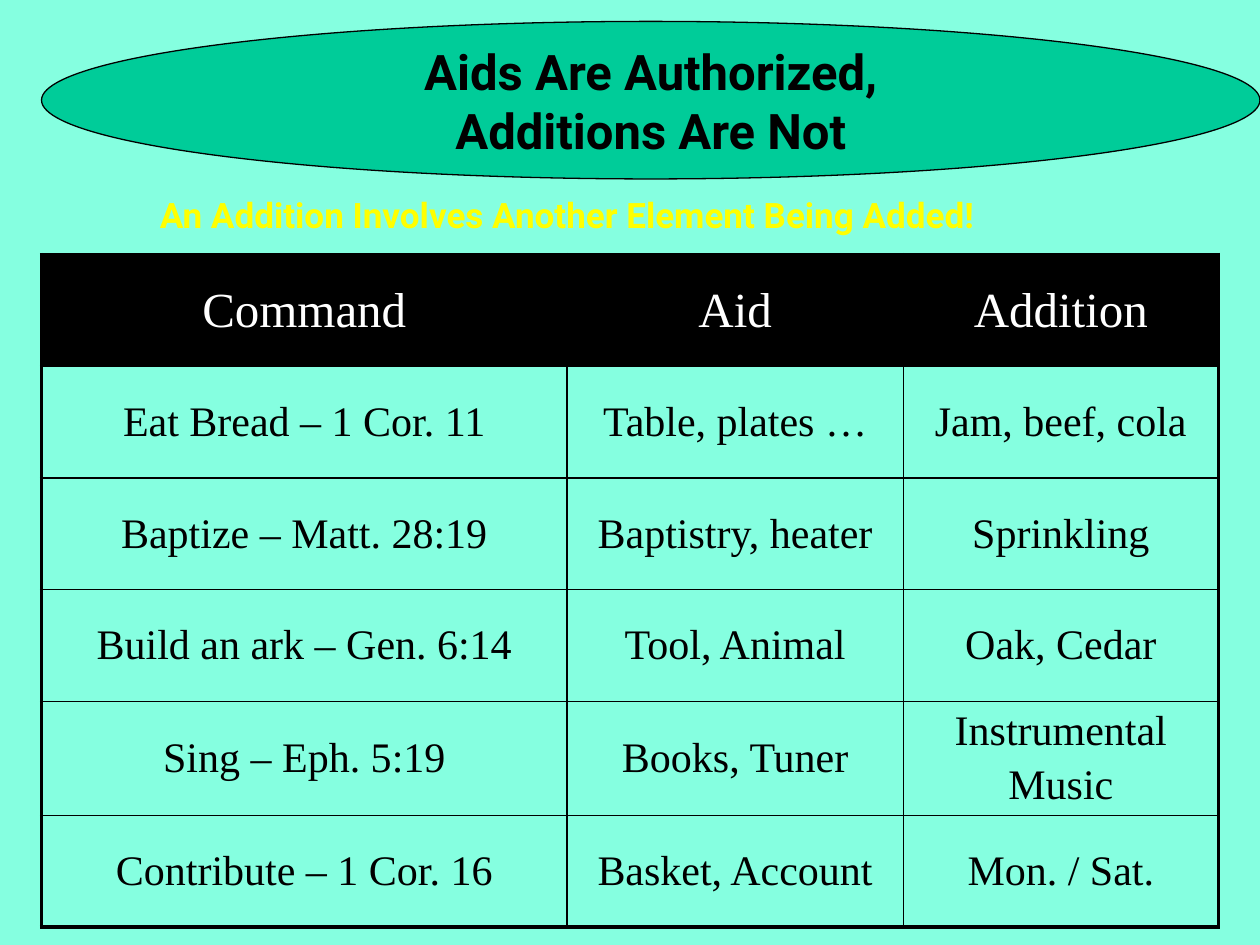
from lxml import etree
from pptx import Presentation
from pptx.dml.color import RGBColor
from pptx.enum import shapes, text
from pptx.oxml import ns
from pptx.util import Inches, Pt

TITLE = ["Aids Are Authorized,", "Additions Are Not"]
SUBTITLE = "An Addition Involves Another Element Being Added!"
HEADINGS = ["Command", "Aid", "Addition"]
EXAMPLES = [
    ["Eat Bread – 1 Cor. 11", "Table, plates …", "Jam, beef, cola"],
    ["Baptize – Matt. 28:19", "Baptistry, heater", "Sprinkling"],
    ["Build an ark – Gen. 6:14", "Tool, Animal", "Oak, Cedar"],
    ["Sing – Eph. 5:19", "Books, Tuner", "Instrumental\nMusic"],
    ["Contribute – 1 Cor. 16", "Basket, Account", "Mon. / Sat."],
]
COLUMN_WIDTHS = [4.17, 2.67, 2.5]
TABLE_HEIGHT = 5.32
COLORS = {"background": "85FFE0", "oval": "00CC99", "ink": "000000",
          "heading": "FFFFFF", "subtitle": "FFFF00"}
SANS, SERIF = "Roboto", "Times New Roman"
OUTER, INNER = 2.25, 1


def rgb(name):
    return RGBColor.from_string(COLORS[name])


def write(frame, lines, size, font, color, bold=False, align=None, space_pct=0):
    for i, line in enumerate(lines):
        paragraph = frame.paragraphs[0] if i == 0 else frame.add_paragraph()
        paragraph.alignment = align
        if space_pct:
            before = etree.SubElement(paragraph._p.get_or_add_pPr(), ns.qn("a:spcBef"))
            etree.SubElement(before, ns.qn("a:spcPct"), val=str(space_pct * 1000))
        run = paragraph.add_run()
        run.text = line
        run.font.size, run.font.name, run.font.bold = Pt(size), font, bold
        run.font.color.rgb = rgb(color)


def add_borders(cell, widths):
    for side, width in widths.items():
        line = etree.SubElement(cell._tc.get_or_add_tcPr(), ns.qn(f"a:ln{side}"),
                                w=str(Pt(width)))
        fill = etree.SubElement(line, ns.qn("a:solidFill"))
        etree.SubElement(fill, ns.qn("a:srgbClr"), val=COLORS["ink"])


prs = Presentation()
prs.slide_width, prs.slide_height = Inches(10), Inches(7.5)
slide = prs.slides.add_slide(prs.slide_layouts[6])
slide.background.fill.solid()
slide.background.fill.fore_color.rgb = rgb("background")

# Title oval
oval = slide.shapes.add_shape(shapes.MSO_SHAPE.OVAL, Inches(0.33), Inches(0.17),
                              Inches(9.67), Inches(1.25))
oval.shadow.inherit = False
oval.fill.solid()
oval.fill.fore_color.rgb = rgb("oval")
oval.line.color.rgb = rgb("ink")
oval.line.width = Pt(0.75)
oval.text_frame.word_wrap = False
oval.text_frame.vertical_anchor = text.MSO_ANCHOR.MIDDLE
write(oval.text_frame, TITLE, 28, SANS, "ink", True, text.PP_ALIGN.CENTER)

# Table of commands, aids and additions
rows = [HEADINGS] + EXAMPLES
last_row, last_col = len(rows) - 1, len(HEADINGS) - 1
table = slide.shapes.add_table(len(rows), len(HEADINGS), Inches(0.33), Inches(2.02),
                               Inches(sum(COLUMN_WIDTHS)), Inches(TABLE_HEIGHT)).table
table.first_row = table.horz_banding = False
for column, width in zip(table.columns, COLUMN_WIDTHS):
    column.width = Inches(width)
for r, entries in enumerate(rows):
    table.rows[r].height = Inches(TABLE_HEIGHT / len(rows))
    for c, entry in enumerate(entries):
        cell = table.cell(r, c)
        add_borders(cell, {"L": OUTER if c == 0 else INNER,
                           "R": OUTER if c == last_col else INNER,
                           "T": OUTER if r == 0 else INNER,
                           "B": OUTER if r == last_row else INNER})
        cell.vertical_anchor = text.MSO_ANCHOR.MIDDLE
        if r == 0:
            cell.fill.solid()
            cell.fill.fore_color.rgb = rgb("ink")
        else:
            cell.fill.background()
        size, color = (28, "heading") if r == 0 else (24, "ink")
        write(cell.text_frame, entry.split("\n"), size, SERIF, color,
              align=text.PP_ALIGN.CENTER, space_pct=20)

# Subtitle
subtitle = slide.shapes.add_textbox(Inches(1.17), Inches(1.49), Inches(7.45), Inches(0.43))
subtitle.text_frame.word_wrap = False
subtitle.text_frame.auto_size = text.MSO_AUTO_SIZE.SHAPE_TO_FIT_TEXT
write(subtitle.text_frame, [SUBTITLE], 20, SANS, "subtitle", True, text.PP_ALIGN.LEFT)

prs.save("out.pptx")
